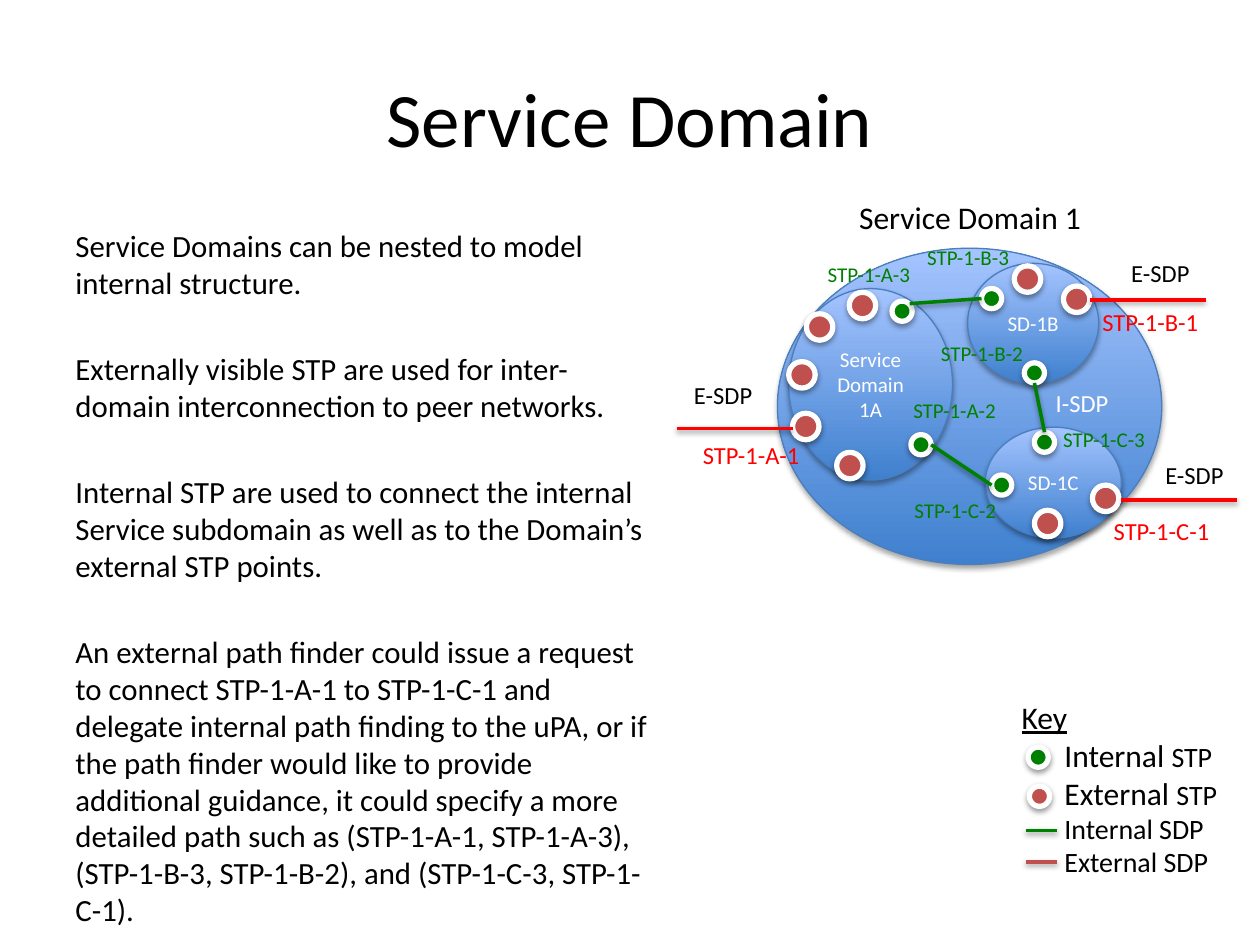
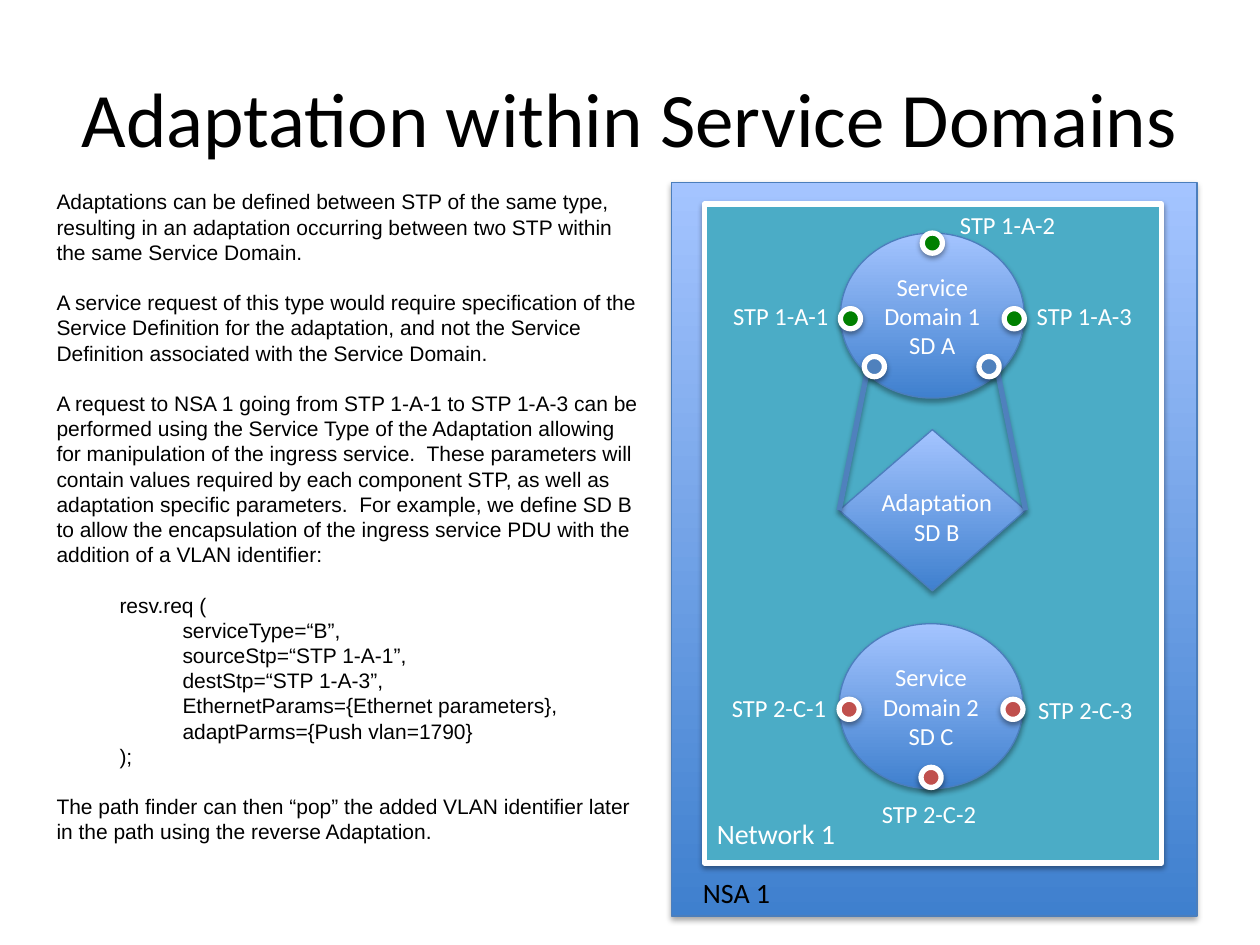
from dataclasses import dataclass
from typing import Any

from lxml.etree import SubElement
from pptx import Presentation
from pptx.dml.color import RGBColor
from pptx.enum.shapes import MSO_CONNECTOR, MSO_SHAPE as Preset
from pptx.enum.text import MSO_ANCHOR as Anchor, MSO_AUTO_SIZE as AutoSize, PP_ALIGN as Align
from pptx.oxml.ns import qn
from pptx.util import Inches, Pt

BLACK, WHITE = "000000", "FFFFFF"
GREEN, BRICK, RED = "008000", "C0504D", "FF0000"
BLUE, OUTLINE, TEAL = "4F81BD", "4B7EBC", "4BACC6"
GRADIENT = ("3F80CE", "A4C4FF")
SMALL_DOT, BIG_DOT = 0.16, 0.21
FLAT_SHADOW, DEEP_SHADOW = (38, 1.6), (35, 1.8)


def rgb(value):
    return RGBColor.from_string(value)


def cast_shadow(item, opacity, distance):
    """Give a shape or connector a soft shadow that falls straight down."""
    properties = item._element.spPr
    effects = properties.find(qn("a:effectLst"))
    if effects is None:
        effects = SubElement(properties, qn("a:effectLst"))
    shadow = SubElement(effects, qn("a:outerShdw"), blurRad=str(Pt(3.1)), dist=str(Pt(distance)),
                        dir="5400000", rotWithShape="0")
    color = SubElement(shadow, qn("a:srgbClr"), val=BLACK)
    SubElement(color, qn("a:alpha"), val=str(opacity * 1000))


def add_span(para, text, size, color=BLACK, font="Calibri"):
    span = para.add_run()
    span.text = text
    span.font.name, span.font.size = font, Pt(size)
    span.font.color.rgb = rgb(color)
    return span


def add_para(frame, index):
    return frame.add_paragraph() if index else frame.paragraphs[0]


def write(frame, lines, size, color, align=Align.LEFT):
    for index, line in enumerate(lines):
        para = add_para(frame, index)
        para.alignment = align
        add_span(para, line, size, color)


def indent(para, inches):
    properties = para._p.get_or_add_pPr()
    properties.set("marL", str(Inches(inches)))
    properties.set("indent", "0")


@dataclass
class Panel:
    """A region of a slide; its parts are placed from its top left corner."""
    slide: Any
    left: float
    top: float

    def point(self, x, y):
        return Inches(self.left + x), Inches(self.top + y)

    def shape(self, preset, x, y, width, height, fill=None, line=OUTLINE, weight=0.75,
              shadow=DEEP_SHADOW):
        """Add a preset shape, with the shared gradient when no fill is given."""
        shape = self.slide.shapes.add_shape(preset, *self.point(x, y), Inches(width), Inches(height))
        if fill:
            shape.fill.solid()
            shape.fill.fore_color.rgb = rgb(fill)
        else:
            shape.fill.gradient()
            shape.fill.gradient_angle = 90
            for stop, color in zip(shape.fill.gradient_stops, GRADIENT):
                stop.color.rgb = rgb(color)
        shape.line.color.rgb = rgb(line)
        shape.line.width = Pt(weight)
        shape.shadow.inherit = False
        cast_shadow(shape, *shadow)
        return shape

    def domain(self, x, y, width, height, lines=(), size=12):
        oval = self.shape(Preset.OVAL, x, y, width, height)
        oval.text_frame.vertical_anchor = Anchor.MIDDLE
        write(oval.text_frame, lines, size, WHITE, Align.CENTER)

    def dot(self, x, y, color, size=SMALL_DOT):
        self.shape(Preset.OVAL, x, y, size, size, color, WHITE, 3, FLAT_SHADOW)

    def line(self, start, end, color, weight=2, shadow=FLAT_SHADOW):
        link = self.slide.shapes.add_connector(
            MSO_CONNECTOR.STRAIGHT, *self.point(*start), *self.point(*end))
        link.line.color.rgb = rgb(color)
        link.line.width = Pt(weight)
        cast_shadow(link, *shadow)
        return link

    def text_box(self, x, y, width, height, wrap=True):
        frame = self.slide.shapes.add_textbox(
            *self.point(x, y), Inches(width), Inches(height)).text_frame
        frame.word_wrap = wrap
        frame.auto_size = AutoSize.NONE if wrap else AutoSize.SHAPE_TO_FIT_TEXT
        return frame

    def label(self, x, y, width, height, text, size, color, wrap=False, align=Align.LEFT):
        write(self.text_box(x, y, width, height, wrap), text.split("\n"), size, color, align)


def add_titled_slide(deck, title):
    slide = deck.slides.add_slide(deck.slide_layouts[5])
    holder = slide.shapes.title
    holder.left, holder.top, holder.width, holder.height = map(Inches, (0.5, 0.3, 9, 1.25))
    holder.text_frame.vertical_anchor = Anchor.MIDDLE
    write(holder.text_frame, [title], 44, BLACK, Align.CENTER)
    return slide


def add_nesting_text(panel):
    frame = panel.text_box(0, 0, 4.75, 5.07)
    for index, text in enumerate((
        "Service Domains can be nested to model internal structure.",
        "Externally visible STP are used for inter-domain interconnection to peer networks.",
        "Internal STP are used to connect the internal Service subdomain as well as to the "
        "Domain’s external STP points.",
        "An external path finder could issue a request to connect STP-1-A-1 to STP-1-C-1 and "
        "delegate internal path finding to the uPA, or if the path finder would like to provide "
        "additional guidance, it could specify a more detailed path such as (STP-1-A-1, "
        "STP-1-A-3), (STP-1-B-3, STP-1-B-2), and (STP-1-C-3, STP-1-C-1).",
    )):
        para = add_para(frame, index)
        para.space_before = Pt(28 if index else 0)
        add_span(para, text, 17.6)


def add_nested_domains(panel):
    panel.domain(0.8, 0.45, 3.05, 2.51)
    panel.domain(0.89, 0.77, 1.3, 1.52, ["Service Domain", "1A"])
    panel.domain(2.45, 1.87, 1.08, 0.88, ["SD-1C"])
    panel.domain(2.31, 0.57, 1.04, 0.95, ["SD-1B"])

    external_points = ((0.89, 1.35), (1.03, 0.97), (1.37, 0.8), (0.92, 1.76), (1.27, 2.07),
                       (2.84, 2.53), (3.3, 2.33), (2.68, 0.59), (3.07, 0.75))
    internal_points = ((1.86, 1.93), (2.5, 2.25), (2.84, 1.91), (2.76, 1.36),
                       (1.71, 0.87), (2.42, 0.77))
    for x, y in external_points:
        panel.dot(x, y, BRICK, BIG_DOT)
    for x, y in internal_points:
        panel.dot(x, y, GREEN)

    for start, end in (((2.02, 2.01), (2.5, 2.33)), ((2.84, 1.52), (2.92, 1.91)),
                       ((1.85, 0.89), (2.42, 0.85))):
        panel.line(start, end, GREEN)
    for x, y in ((0, 1.88), (3.53, 2.45), (3.28, 0.86)):
        panel.line((x, y), (x + 0.92, y), RED)

    panel.label(1.35, 0, 1.98, 0.4, "Service Domain 1", 18, BLACK)
    panel.label(2.91, 1.51, 0.62, 0.34, "I-SDP", 14, WHITE)
    for x, y in ((0.04, 1.45), (3.51, 0.48), (3.78, 2.08)):
        panel.label(x, y, 0.67, 0.34, "E-SDP", 14, BLACK)
    for x, y, name in ((0.11, 1.92, "A-1"), (3.28, 0.87, "B-1"), (3.37, 2.53, "C-1")):
        panel.label(x, y, 0.98, 0.34, f"STP-1-{name}", 14, RED)
    for x, y, name in ((1.78, 1.59, "A-2"), (1.79, 2.38, "C-2"), (2, 1.13, "B-2"),
                       (2.97, 1.82, "C-3"), (1.1, 0.51, "A-3"), (1.89, 0.37, "B-3")):
        panel.label(x, y, 0.87, 0.3, f"STP-1-{name}", 12, GREEN)


def add_key(panel):
    frame = panel.text_box(0, 0, 1.77, 1.55)
    add_span(frame.paragraphs[0], "Key", 18).font.underline = True
    for spans in ((("Internal ", 18), ("STP", 16)), (("External ", 18), ("STP", 16)),
                  (("Internal SDP", 16),), (("External SDP", 16),)):
        para = frame.add_paragraph()
        indent(para, 0.34)
        for text, size in spans:
            add_span(para, text, size)
    panel.dot(0.15, 0.44, GREEN)
    panel.dot(0.16, 0.75, BRICK)
    for y, color in ((1.1, GREEN), (1.35, BRICK)):
        panel.line((0.13, y), (0.38, y), color)


def add_adaptation_text(panel):
    frame = panel.text_box(0, 0, 4.85, 5.82)
    gap = 14.4
    for index, (text, margin, before) in enumerate((
        ("Adaptations can be defined between STP of the same type, resulting in an adaptation "
         "occurring between two STP within the same Service Domain.", 0, 0),
        ("A service request of this type would require specification of the Service Definition "
         "for the adaptation, and not the Service Definition associated with the Service "
         "Domain.", 0, gap),
        ("A request to NSA 1 going from STP 1-A-1 to STP 1-A-3 can be performed using the "
         "Service Type of the Adaptation allowing for manipulation of the ingress service.  "
         "These parameters will contain values required by each component STP, as well as "
         "adaptation specific parameters.  For example, we define SD B to allow the "
         "encapsulation of the ingress service PDU with the addition of a VLAN identifier:",
         0, gap),
        ("resv.req (", 0.5, gap),
        ("serviceType=“B”,", 1, 0),
        ("sourceStp=“STP 1-A-1”,", 1, 0),
        ("destStp=“STP 1-A-3”,", 1, 0),
        ("EthernetParams={Ethernet parameters},", 1, 0),
        ("adaptParms={Push vlan=1790}", 1, 0),
        (");", 0.5, 0),
        ("The path finder can then “pop” the added VLAN identifier later in the path using the "
         "reverse Adaptation.", 0, gap),
    )):
        para = add_para(frame, index)
        para.line_spacing, para.space_before = Pt(14.4), Pt(before)
        indent(para, margin)
        add_span(para, text, 12, font="Arial")


def add_ported_domain(panel, x, y, lines, color, middle_port):
    """Add a service domain with ports at both sides and one at middle_port down its axis."""
    panel.domain(x, y, 1.46, 1.31, lines, 14)
    for across, down in ((0, 0.6), (1.3, 0.6), (0.65, middle_port)):
        panel.dot(x + across, y + down, color)


def add_network(panel):
    panel.shape(Preset.RECTANGLE, 0, 0, 4.17, 5.82)
    panel.shape(Preset.RECTANGLE, 0.26, 0.17, 3.63, 5.23, TEAL, WHITE, 3, FLAT_SHADOW)
    panel.label(0.26, 4.98, 1.18, 0.37, "Network 1", 16, WHITE, True)
    panel.label(0.15, 5.45, 1.18, 0.37, "NSA 1", 16, BLACK, True)

    add_ported_domain(panel, 1.33, 3.5, ["Service Domain 2", "SD C"], BRICK, 1.14)
    diamond = panel.shape(Preset.DIAMOND, 1.33, 1.96, 1.48, 1.28)
    panel.label(1.56, 2.37, 1.09, 0.57, "Adaptation\nSD B", 14, WHITE, align=Align.CENTER)
    add_ported_domain(panel, 1.34, 0.4, ["Service Domain 1", "SD A"], GREEN, 0)

    for corner_x, side, end_x, dot_x in ((1.33, 1, 1.55, 1.53), (2.81, 3, 2.59, 2.44)):
        link = panel.line((corner_x, 2.6), (end_x, 1.51), BLUE, 3, DEEP_SHADOW)
        link.begin_connect(diamond, side)
        panel.dot(dot_x, 1.38, BLUE)

    for x, y, name in ((2.19, 0.17, "1-A-2"), (2.8, 0.89, "1-A-3"), (0.39, 0.89, "1-A-1"),
                       (2.81, 4.02, "2-C-3"), (0.38, 4, "2-C-1"), (1.57, 4.84, "2-C-2")):
        panel.label(x, y, 1, 0.34, f"STP {name}", 14, WHITE, True)


def main():
    deck = Presentation()
    deck.slide_width, deck.slide_height = Inches(10), Inches(7.5)

    nesting = add_titled_slide(deck, "Service Domain")
    add_nesting_text(Panel(nesting, 0.5, 1.75))
    add_nested_domains(Panel(nesting, 5.37, 1.52))
    add_key(Panel(nesting, 8.01, 5.49))

    adaptation = add_titled_slide(deck, "Adaptation within Service Domains")
    add_network(Panel(adaptation, 5.33, 1.45))
    add_adaptation_text(Panel(adaptation, 0.35, 1.45))

    deck.save("out.pptx")


if __name__ == "__main__":
    main()
